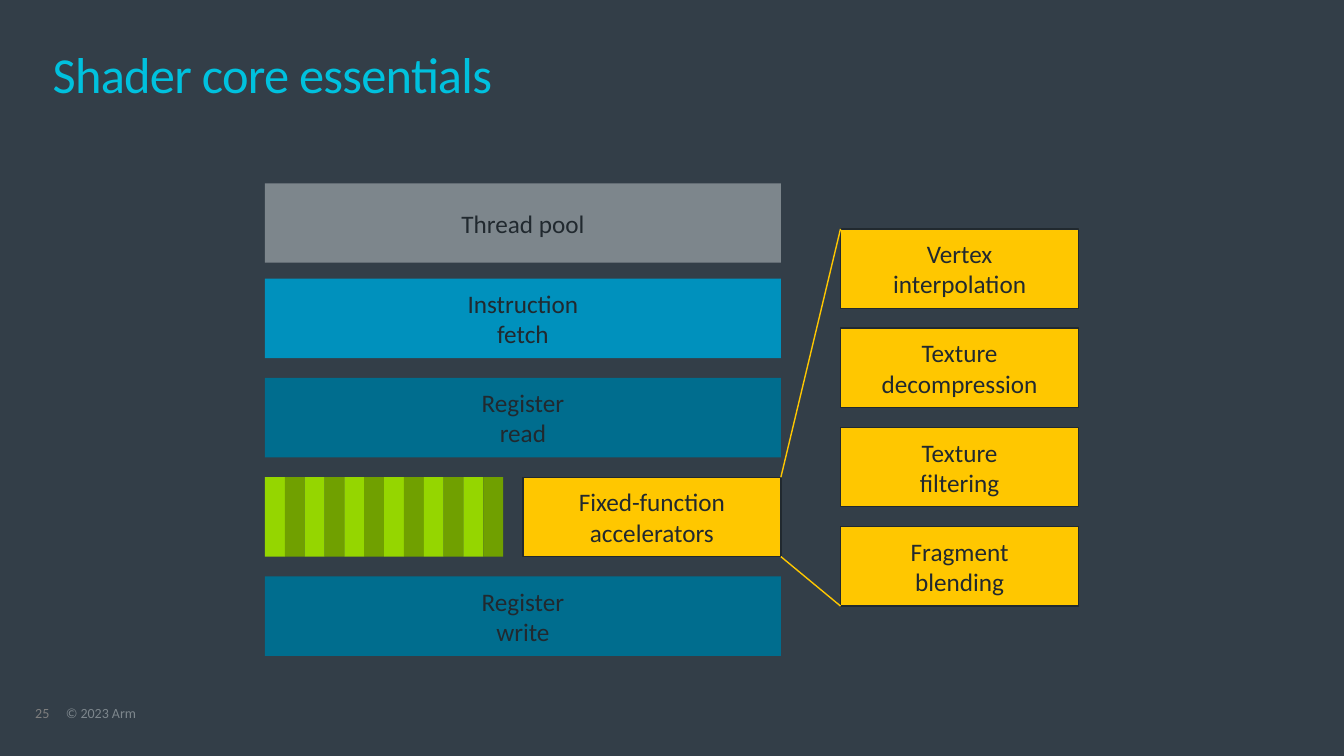
from lxml import etree
from pptx import Presentation
from pptx.dml.color import RGBColor
from pptx.enum import shapes, text
from pptx.oxml.ns import qn
from pptx.util import Pt

INK, YELLOW = "21292F", "FFC700"
BAR_H, PITCH = 56.7, 70.9


def rgb(value):
    """Return the colour for a hex string."""
    return RGBColor.from_string(value)


def add_run(p, words, size, color):
    """Add one run of Calibri text to a paragraph."""
    r = p.add_run()
    r.text = words
    r.font.name, r.font.size = "Calibri", Pt(size)
    r.font.color.rgb = rgb(color)
    return r


def add_label(s, x, y, w, h, words, size, color, spacing):
    """Place a line of text in a box without margins."""
    tf = s.shapes.add_textbox(Pt(x), Pt(y), Pt(w), Pt(h)).text_frame
    tf.word_wrap = True
    tf.margin_left = tf.margin_right = tf.margin_top = tf.margin_bottom = 0
    p = tf.paragraphs[0]
    p.line_spacing = spacing
    return add_run(p, words, size, color)


def add_block(s, x, y, w, h, fill, lines=(), outline=None):
    """Place a filled rectangle with centred lines of text."""
    sp = s.shapes.add_shape(shapes.MSO_SHAPE.RECTANGLE, Pt(x), Pt(y), Pt(w), Pt(h))
    sp.shadow.inherit = False
    sp.fill.solid()
    sp.fill.fore_color.rgb = rgb(fill)
    if outline:
        sp.line.color.rgb = rgb(outline)
        sp.line.width = Pt(1)
    else:
        sp.line.fill.background()
    tf = sp.text_frame
    tf.vertical_anchor = text.MSO_ANCHOR.MIDDLE
    p = tf.paragraphs[0]
    p.alignment = text.PP_ALIGN.CENTER
    for i, words in enumerate(lines):
        if i:
            p.add_line_break()
        add_run(p, words, 18, INK)


def add_link(s, x1, y1, x2, y2):
    """Draw a thin yellow line between two points."""
    ln = s.shapes.add_connector(shapes.MSO_CONNECTOR.STRAIGHT, Pt(x1), Pt(y1), Pt(x2), Pt(y2))
    ln.line.color.rgb = rgb(YELLOW)
    ln.line.width = Pt(1)
    etree.SubElement(ln._element.spPr, qn("a:effectLst"))


def add_pipeline(s, x, y, w):
    """Stack the shader core stages and return the top of the accelerator block."""
    add_block(s, x, y, w, BAR_H, "7D868C", ["Thread pool"])
    first = y + 68.1
    stages = [
        (0, "0091BD", ["Instruction", "fetch"]),
        (1, "006D8E", ["Register", "read"]),
        (3, "006D8E", ["Register", "write"]),
    ]
    for row, fill, lines in stages:
        add_block(s, x, first + row * PITCH, w, BAR_H, fill, lines)
    units_y, stripe_w = first + 2 * PITCH, 14.18
    for i in range(12):
        fill = "70A000" if i % 2 else "95D600"
        add_block(s, x + i * stripe_w, units_y, stripe_w, BAR_H, fill)
    fixed_w = w / 2
    add_block(s, x + w - fixed_w, units_y, fixed_w, BAR_H, YELLOW,
              ["Fixed-function", "accelerators"], INK)
    return units_y


def add_accelerators(s, x, y, w):
    """Stack the fixed-function units and return the bottom of the stack."""
    units = [
        ["Vertex", "interpolation"],
        ["Texture", "decompression"],
        ["Texture", "filtering"],
        ["Fragment", "blending"],
    ]
    for i, lines in enumerate(units):
        add_block(s, x, y + i * PITCH, w, BAR_H, YELLOW, lines, INK)
    return y + (len(units) - 1) * PITCH + BAR_H


def add_diagram(s, x, y):
    """Place the pipeline, its detail column and the lines between them."""
    core_w = 368.5
    core_right, detail_x, detail_y = x + core_w, x + 411.1, y + 32.5
    units_y = add_pipeline(s, x, y, core_w)
    detail_bottom = add_accelerators(s, detail_x, detail_y, 170.1)
    add_link(s, core_right, units_y, detail_x, detail_y)
    add_link(s, core_right, units_y + BAR_H, detail_x, detail_bottom)


def add_frame(s):
    """Set the background, the title and the footer."""
    s.background.fill.solid()
    s.background.fill.fore_color.rgb = rgb("333E48")
    title = add_label(s, 37.6, 37.5, 884, 41, "Shader core essentials", 36, "00C1DE", 0.85)
    title.font._element.set("spc", "-50")
    add_label(s, 25.2, 504.6, 24.5, 10.8, "25", 10, "7F7F7F", 0.9)
    add_label(s, 47, 504.6, 365, 10.8, "© 2023 Arm", 10, "7D868C", 0.9)


def main():
    """Build and save the slide."""
    prs = Presentation()
    prs.slide_width, prs.slide_height = Pt(960), Pt(540)
    s = prs.slides.add_slide(prs.slide_layouts[6])
    add_frame(s)
    add_diagram(s, 189.3, 131)
    prs.save("out.pptx")


if __name__ == "__main__":
    main()
